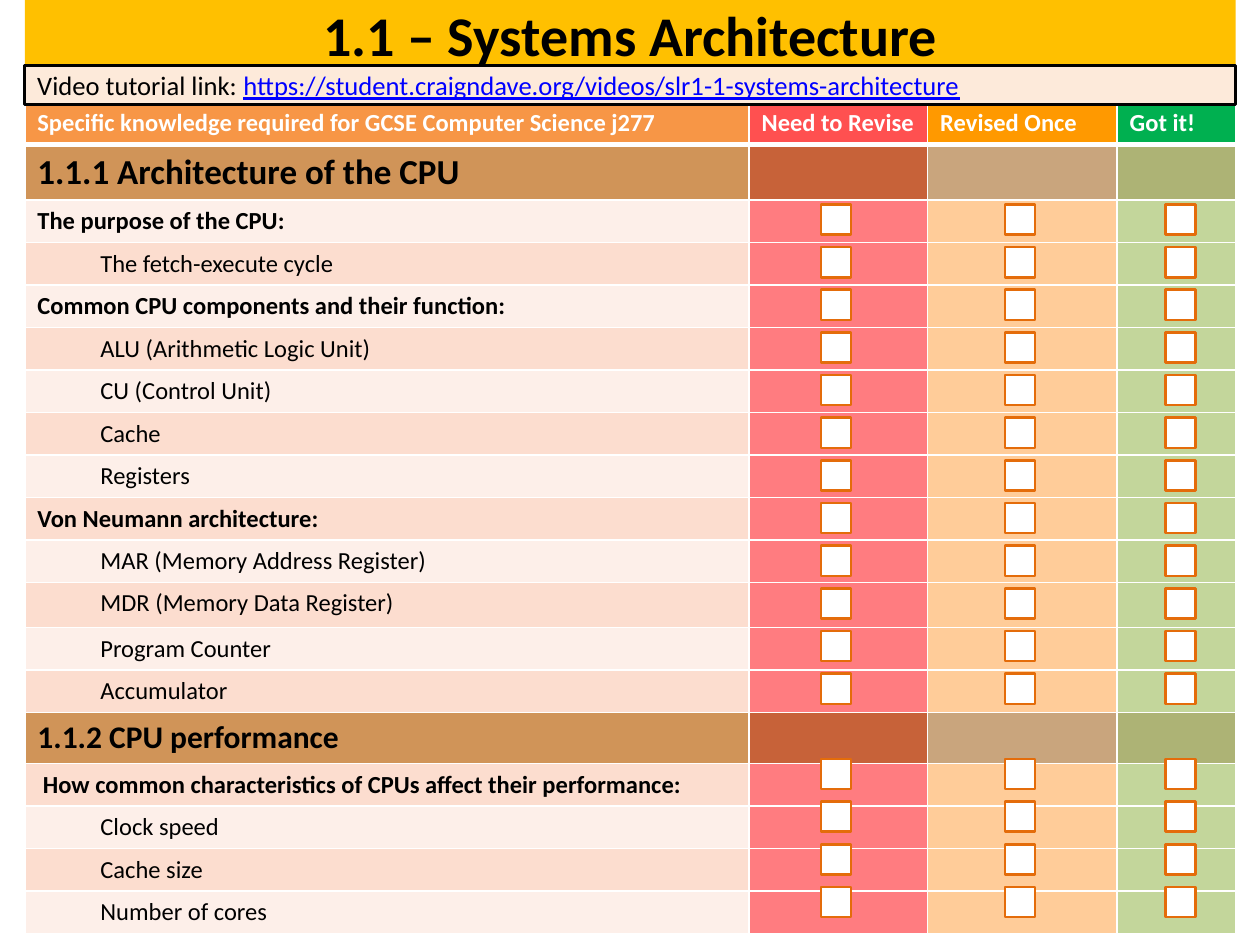
from lxml.etree import SubElement
from pptx import Presentation
from pptx.dml.color import RGBColor
from pptx.enum.shapes import MSO_SHAPE
from pptx.enum.text import MSO_ANCHOR, PP_ALIGN
from pptx.oxml.ns import qn
from pptx.util import Cm, Pt

FONT = "Calibri"
BLACK = RGBColor(0x00, 0x00, 0x00)
WHITE = RGBColor(0xFF, 0xFF, 0xFF)
GOLD = RGBColor(0xFF, 0xC0, 0x00)
CREAM = RGBColor(0xFD, 0xEA, 0xDA)
LINK_BLUE = RGBColor(0x00, 0x00, 0xFF)
BOX_ORANGE = RGBColor(0xE4, 0x6C, 0x0A)
HEADER_FILLS = [RGBColor(0xF7, 0x96, 0x46), RGBColor(0xFF, 0x50, 0x50),
                RGBColor(0xFF, 0x99, 0x00), RGBColor(0x00, 0xB0, 0x50)]
SECTION_FILLS = [RGBColor(0xD0, 0x94, 0x58), RGBColor(0xC7, 0x62, 0x39),
                 RGBColor(0xC9, 0xA5, 0x7D), RGBColor(0xAD, 0xB3, 0x75)]
RATING_FILLS = [RGBColor(0xFF, 0x7C, 0x80), RGBColor(0xFF, 0xCC, 0x99),
                RGBColor(0xC3, 0xD6, 0x9B)]
BAND_FILLS = [RGBColor(0xFD, 0xEF, 0xE9), RGBColor(0xFC, 0xDD, 0xCF)]

HEADERS = ["Specific knowledge required for GCSE Computer Science j277",
           "Need to Revise", "Revised Once", "Got it!"]
# Kind of row -> (text size, bold, left indent in cm)
STYLES = {"section": (20, True, 0), "subsection": (18, True, 0),
          "topic": (14, True, 0), "wide topic": (14, True, 0.11),
          "item": (14, False, 1.27)}
ROWS = [
    ("section", "1.1.1 Architecture of the CPU"),
    ("topic", "The purpose of the CPU:"),
    ("item", "The fetch-execute cycle"),
    ("topic", "Common CPU components and their function:"),
    ("item", "ALU (Arithmetic Logic Unit)"),
    ("item", "CU (Control Unit)"),
    ("item", "Cache"),
    ("item", "Registers"),
    ("topic", "Von Neumann architecture:"),
    ("item", "MAR (Memory Address Register)"),
    ("item", "MDR (Memory Data Register)"),
    ("item", "Program Counter"),
    ("item", "Accumulator"),
    ("subsection", "1.1.2 CPU performance"),
    ("wide topic", "How common characteristics of CPUs affect their performance:"),
    ("item", "Clock speed"),
    ("item", "Cache size"),
    ("item", "Number of cores"),
]
TALL_ROW = 11
COLUMN_WIDTHS = [14.6, 3.6, 3.82, 2.39]


def add_box(slide, left, top, width, height, fill, line=None):
    sp = slide.shapes.add_shape(MSO_SHAPE.RECTANGLE, Cm(left), Cm(top), Cm(width), Cm(height))
    sp.shadow.inherit = False
    sp.fill.solid()
    sp.fill.fore_color.rgb = fill
    if line is None:
        sp.line.fill.background()
    else:
        sp.line.color.rgb = line
        sp.line.width = Pt(1.5)
    return sp


def set_font(font, size, color, bold=False):
    font.name = FONT
    font.size = Pt(size)
    font.bold = bold
    font.color.rgb = color


def add_title(slide, left, top, width, height):
    tf = add_box(slide, left, top, width, height, GOLD).text_frame
    tf.word_wrap = True
    tf.vertical_anchor = MSO_ANCHOR.MIDDLE
    p = tf.paragraphs[0]
    p.text = "1.1 – Systems Architecture"
    p.alignment = PP_ALIGN.CENTER
    set_font(p.font, 32, BLACK, True)


def add_link_bar(slide, left, top, width, height):
    tf = add_box(slide, left, top, width, height, CREAM, BLACK).text_frame
    tf.word_wrap = True
    tf.vertical_anchor = MSO_ANCHOR.MIDDLE
    p = tf.paragraphs[0]
    p.alignment = PP_ALIGN.LEFT
    set_font(p.font, 15.2, BLACK)
    p.add_run().text = "Video tutorial link: "
    r = p.add_run()
    r.text = "https://student.craigndave.org/videos/slr1-1-systems-architecture"
    r.font.color.rgb = LINK_BLUE
    r.font.underline = True


def style_cell(cell, fill, bottom_width=1):
    """Give the cell white borders, then its fill."""
    tcPr = cell._tc.get_or_add_tcPr()
    for side, width in (("L", 1), ("R", 1), ("T", 1), ("B", bottom_width)):
        ln = SubElement(tcPr, qn(f"a:ln{side}"), w=str(Pt(width)))
        SubElement(SubElement(ln, qn("a:solidFill")), qn("a:srgbClr"), val=str(WHITE))
    cell.fill.solid()
    cell.fill.fore_color.rgb = fill


def write_cell(cell, text, size, bold, color, indent=0):
    p = cell.text_frame.paragraphs[0]
    p.text = text
    if indent:
        p._p.get_or_add_pPr().set("marL", str(Cm(indent)))
    set_font(p.font, size, color, bold)
    if not text:
        p._p.get_or_add_endParaRPr().set("sz", str(size * 100))


def add_checklist(slide, left, top, width, height):
    frame = slide.shapes.add_table(len(ROWS) + 1, len(HEADERS),
                                   Cm(left), Cm(top), Cm(width), Cm(height))
    table = frame.table
    table.first_row = table.horz_banding = False
    for column, column_width in zip(table.columns, COLUMN_WIDTHS):
        column.width = Cm(column_width)
    for i, row in enumerate(table.rows):
        row.height = Cm(0.91 if i == TALL_ROW else 0.74)
    frame.height = Cm(height)

    for c, (text, fill) in enumerate(zip(HEADERS, HEADER_FILLS)):
        style_cell(table.cell(0, c), fill, 3)
        write_cell(table.cell(0, c), text, 14, True, WHITE)
    for i, (kind, text) in enumerate(ROWS, 1):
        is_section = kind.endswith("section")
        fills = SECTION_FILLS if is_section else [BAND_FILLS[i % 2]] + RATING_FILLS
        size, bold, indent = STYLES[kind]
        for c, fill in enumerate(fills):
            style_cell(table.cell(i, c), fill)
            if c == 0:
                write_cell(table.cell(i, c), text, size, bold, BLACK, indent)
            else:
                write_cell(table.cell(i, c), "", 14, False, BLACK)


def add_tick_boxes(slide, left, top):
    """Put three boxes on every row that is not a section heading."""
    for i, (kind, _) in enumerate(ROWS):
        if not kind.endswith("section"):
            for x in (16.05, 19.76, 22.99):
                add_box(slide, left + x, top + 1.2 + 0.86 * i, 0.61, 0.61, WHITE, BOX_ORANGE)


def main():
    prs = Presentation()
    prs.slide_width, prs.slide_height = Cm(25.4), Cm(19.05)
    slide = prs.slides.add_slide(prs.slide_layouts[6])
    left, width, table_top = 0.5, 24.41, 2.06
    add_checklist(slide, left, table_top, width, 16.59)
    add_title(slide, left, 0, width, 1.37)
    add_tick_boxes(slide, left, table_top)
    add_link_bar(slide, left, 1.32, width, 0.79)
    prs.save("out.pptx")


if __name__ == "__main__":
    main()
